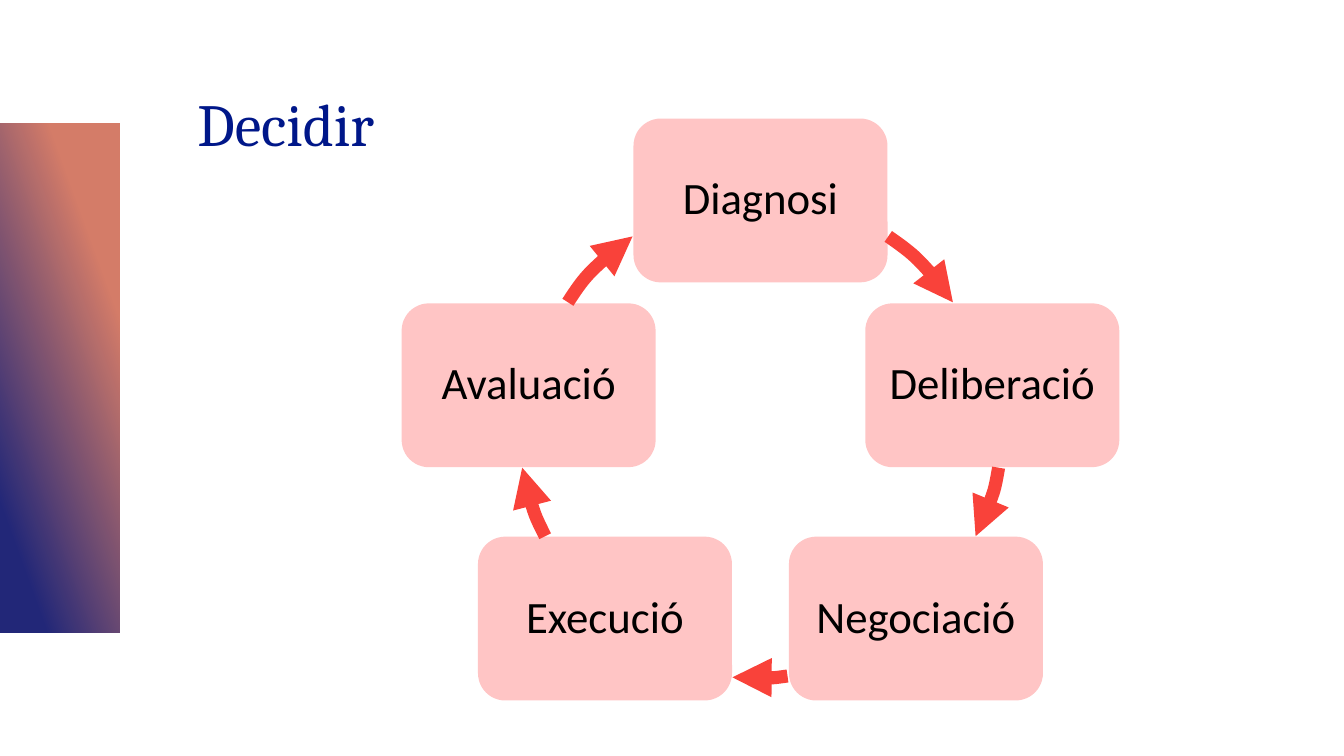
from typing import NamedTuple

from lxml import etree
from pptx import Presentation
from pptx.dml.color import RGBColor
from pptx.enum.shapes import MSO_SHAPE
from pptx.enum.text import MSO_ANCHOR, PP_ALIGN
from pptx.oxml.ns import qn
from pptx.util import Pt

RECTANGLE = MSO_SHAPE.RECTANGLE
ROUNDED = MSO_SHAPE.ROUNDED_RECTANGLE
MIDDLE, BOTTOM = MSO_ANCHOR.MIDDLE, MSO_ANCHOR.BOTTOM
LEFT, CENTER = PP_ALIGN.LEFT, PP_ALIGN.CENTER

COLORS = {
    "title": "001789",
    "step": "FFC5C5",
    "text": "000000",
    "arrow": "F9423A",
    "band_top": "D47C68",
    "band_bottom": "222778",
}
AXIS = 407.4
STEP_WIDTH, STEP_HEIGHT = 136.1, 87.8
CYCLE_SIZE = 261.4


class Step(NamedTuple):
    label: str
    offset: float
    top: float


class Point(NamedTuple):
    x: float
    y: float


class Curve(NamedTuple):
    corner: Point
    points: list[Point]


STEPS = [
    Step("Diagnosi", 0, 63.5),
    Step("Deliberació", 124.2, 162.5),
    Step("Negociació", 83.3, 287.5),
    Step("Execució", -83.3, 287.5),
    Step("Avaluació", -124.2, 162.5),
]
RIGHT_CURVES = [
    Curve(
        Point(271.4, 103.7),
        [Point(475.9, 126.7), Point(489.6, 136.1), Point(501.8, 148.3), Point(510.5, 162)],
    ),
    Curve(
        Point(276.5, 97),
        [Point(535, 250.6), Point(532.8, 263.5), Point(528.5, 275.8), Point(522.7, 287.3)],
    ),
]
BOTTOM_CURVE = Curve(
    Point(274.3, 102.2),
    [Point(421.9, 362.2), Point(411.8, 363.6), Point(401.8, 363.6), Point(392.4, 362.9)],
)


def color(name: str) -> RGBColor:
    return RGBColor.from_string(COLORS[name])


def write(frame, text: str, font: str, size: float, shade: str, align) -> None:
    para = frame.paragraphs[0]
    para.alignment = align
    para.line_spacing = 0.9
    span = para.add_run()
    span.text = text
    span.font.name = font
    span.font.size = Pt(size)
    span.font.color.rgb = color(shade)


def draw_band(page) -> None:
    band = page.shapes.add_shape(RECTANGLE, Pt(0), Pt(66), Pt(64.2), Pt(273))
    band.shadow.inherit = False
    band.line.fill.background()
    band.fill.gradient()
    band.fill.gradient_angle = 200
    stops = [(0.23, "band_top"), (0.85, "band_bottom")]
    for stop, (position, shade) in zip(band.fill.gradient_stops, stops):
        stop.position = position
        stop.color.rgb = color(shade)


def draw_title(page, text: str) -> None:
    title = page.shapes.title
    title.left, title.top = Pt(98.6), Pt(19.8)
    title.width, title.height = Pt(599), Pt(69.1)
    title.text_frame.vertical_anchor = BOTTOM
    write(title.text_frame, text, "Cambria", 32, "title", LEFT)


def draw_step(page, step: Step) -> None:
    left = AXIS + step.offset - STEP_WIDTH / 2
    box = page.shapes.add_shape(
        ROUNDED, Pt(left), Pt(step.top), Pt(STEP_WIDTH), Pt(STEP_HEIGHT)
    )
    box.shadow.inherit = False
    box.fill.solid()
    box.fill.fore_color.rgb = color("step")
    box.line.fill.background()
    frame = box.text_frame
    frame.word_wrap = True
    frame.vertical_anchor = MIDDLE
    frame.margin_left = frame.margin_right = Pt(7)
    write(frame, step.label, "Calibri", 24, "text", CENTER)


def mirror(curve: Curve) -> Curve:
    corner = Point(2 * AXIS - curve.corner.x - CYCLE_SIZE, curve.corner.y)
    return Curve(corner, [Point(2 * AXIS - x, y) for x, y in reversed(curve.points)])


def draw_arrow(page, curve: Curve) -> None:
    left, top = curve.corner
    builder = page.shapes.build_freeform(Pt(left), Pt(top))
    opposite = (Pt(left + CYCLE_SIZE), Pt(top + CYCLE_SIZE))
    builder.add_line_segments([opposite], close=False)
    arrow = builder.convert_to_shape()
    arrow.shadow.inherit = False
    arrow.fill.background()
    arrow.line.color.rgb = color("arrow")
    arrow.line.width = Pt(7)

    route = next(arrow.element.iter(qn("a:path")))
    for segment in list(route):
        route.remove(segment)
    move = etree.SubElement(route, qn("a:moveTo"))
    bend = etree.SubElement(route, qn("a:cubicBezTo"))
    for parent, point in zip((move, bend, bend, bend), curve.points):
        x, y = Pt(point.x - left), Pt(point.y - top)
        etree.SubElement(parent, qn("a:pt"), x=str(int(x)), y=str(int(y)))

    outline = next(arrow.element.iter(qn("a:ln")))
    etree.SubElement(outline, qn("a:tailEnd"), type="triangle")


def main() -> None:
    deck = Presentation()
    deck.slide_width, deck.slide_height = Pt(720), Pt(405)
    page = deck.slides.add_slide(deck.slide_layouts[5])
    draw_band(page)
    draw_title(page, "Decidir")
    left_curves = [mirror(curve) for curve in reversed(RIGHT_CURVES)]
    for step, curve in zip(STEPS, [*RIGHT_CURVES, BOTTOM_CURVE, *left_curves]):
        draw_step(page, step)
        draw_arrow(page, curve)
    deck.save("out.pptx")


if __name__ == "__main__":
    main()
